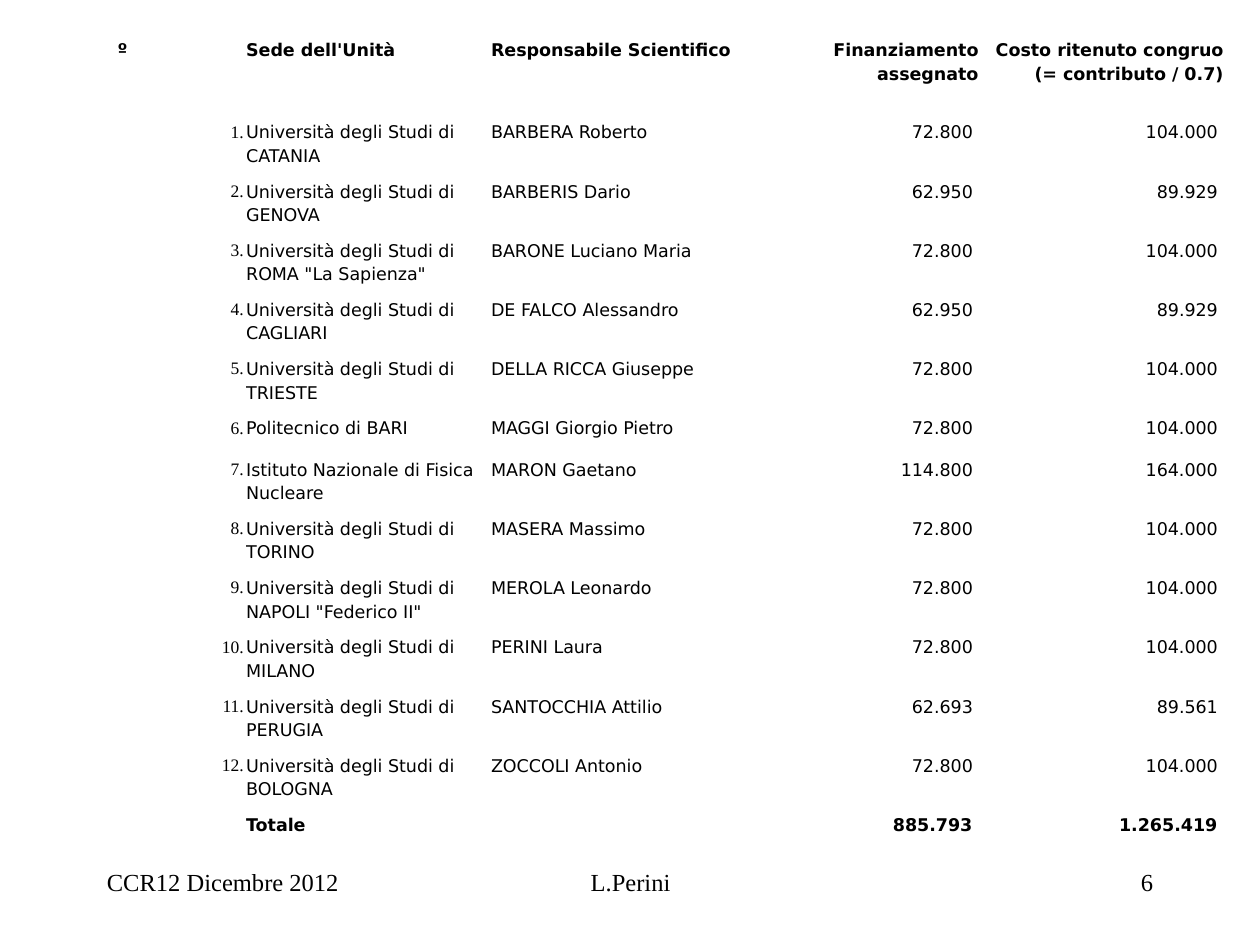
from pptx import Presentation
from pptx.dml.color import RGBColor
from pptx.enum.text import PP_ALIGN
from pptx.oxml.ns import qn
from pptx.util import Inches, Pt
from lxml import etree

LEFT, MID, RIGHT = PP_ALIGN.LEFT, PP_ALIGN.CENTER, PP_ALIGN.RIGHT
COLORS = {"text": "000000", "paper": "FFFFFF"}
SANS, SERIF = "DejaVu Sans", "Times New Roman"
NBSP = chr(160)
SIZE = 10
RATE = 0.7
UNI = "Università degli Studi di "

HEADS = ["º", "Sede dell'Unità", "Responsabile Scientifico",
         "Finanziamento assegnato",
         "Costo ritenuto congruo\n(= contributo / 0.7)"]
HEAD_ALIGNS = [MID, LEFT, LEFT, RIGHT, RIGHT]
ALIGNS = [RIGHT, LEFT, LEFT, RIGHT, RIGHT]

# Seat, scientist in charge, funds assigned
UNITS = [
    (UNI + "CATANIA", "BARBERA Roberto", 72800),
    (UNI + "GENOVA", "BARBERIS Dario", 62950),
    (UNI + 'ROMA "La Sapienza"', "BARONE Luciano Maria", 72800),
    (UNI + "CAGLIARI", "DE FALCO Alessandro", 62950),
    (UNI + "TRIESTE", "DELLA RICCA Giuseppe", 72800),
    ("Politecnico di BARI", "MAGGI Giorgio Pietro", 72800),
    ("Istituto Nazionale di Fisica Nucleare", "MARON Gaetano", 114800),
    (UNI + "TORINO", "MASERA Massimo", 72800),
    (UNI + 'NAPOLI "Federico II"', "MEROLA Leonardo", 72800),
    (UNI + "MILANO", "PERINI Laura", 72800),
    (UNI + "PERUGIA", "SANTOCCHIA Attilio", 62693),
    (UNI + "BOLOGNA", "ZOCCOLI Antonio", 72800),
]
HEAD_H, ROW_H, SHORT_H, TOTAL_H = 0.65, 0.47, 0.33, 0.22

# Left, width, alignment, text
FOOTERS = [
    (0.75, 2.08, LEFT, "CCR12 Dicembre 2012"),
    (3.42, 3.17, MID, "L.Perini"),
    (7.17, 2.08, RIGHT, "6"),
]


def color(name):
    return RGBColor.from_string(COLORS[name])


def add_run(para, text, font, size, bold=False):
    run = para.add_run()
    run.text = text
    run.font.name = font
    run.font.size = Pt(size)
    run.font.bold = bold
    run.font.color.rgb = color("text")


def add_footer(slide, left, width, align, text):
    box = slide.shapes.add_textbox(Inches(left), Inches(6.83),
                                   Inches(width), Inches(0.5))
    box.text_frame.word_wrap = True
    para = box.text_frame.paragraphs[0]
    para.alignment = align
    add_run(para, text, SERIF, 14)


def fill_cell(cell, text, align, font=SANS, bold=False):
    cell.fill.solid()
    cell.fill.fore_color.rgb = color("paper")
    cell.margin_left = cell.margin_right = Inches(0.01)
    cell.margin_top = cell.margin_bottom = Inches(0.01)
    para = cell.text_frame.paragraphs[0]
    para.alignment = align
    para.line_spacing = 1.15
    if not text:
        # An empty cell keeps the small type, so its row stays low
        etree.SubElement(para._p, qn("a:endParaRPr"), sz=str(SIZE * 100))
        return
    for i, line in enumerate(text.split("\n")):
        if i:
            para.add_line_break()
        add_run(para, line, font, SIZE, bold)


def fill_row(table, row, texts, aligns, bold=False):
    for col, (text, align) in enumerate(zip(texts, aligns)):
        font = SERIF if col == 0 and not bold else SANS
        fill_cell(table.cell(row, col), text, align, font, bold)


def money(value):
    return f"{value:,.0f}".replace(",", ".") + NBSP


def sums(funds):
    return [money(funds), money(funds / RATE)]


def add_grants(slide):
    heights = [HEAD_H]
    heights += [ROW_H if len(seat) > 20 else SHORT_H for seat, _, _ in UNITS]
    heights.append(TOTAL_H)
    frame = slide.shapes.add_table(len(heights), len(HEADS), 0, Inches(0.29),
                                   Inches(9.72), Inches(sum(heights)))
    table = frame.table
    table.first_row = table.horz_banding = False
    for col in table.columns:
        col.width = Inches(9.72 / len(HEADS))
    for row, height in zip(table.rows, heights):
        row.height = Inches(height)

    # Heading, numbered units, total
    fill_row(table, 0, HEADS, HEAD_ALIGNS, bold=True)
    for i, (seat, head, funds) in enumerate(UNITS, 1):
        texts = [f"{i}.", seat + NBSP, head + NBSP] + sums(funds)
        fill_row(table, i, texts, ALIGNS)
    total = sum(funds for _, _, funds in UNITS)
    texts = ["", "Totale" + NBSP, ""] + sums(total)
    fill_row(table, len(UNITS) + 1, texts, ALIGNS, bold=True)


def main():
    deck = Presentation()
    deck.slide_width, deck.slide_height = Inches(10), Inches(7.5)
    slide = deck.slides.add_slide(deck.slide_layouts[6])
    slide.background.fill.solid()
    slide.background.fill.fore_color.rgb = color("paper")
    for footer in FOOTERS:
        add_footer(slide, *footer)
    add_grants(slide)
    deck.save("out.pptx")


if __name__ == "__main__":
    main()
